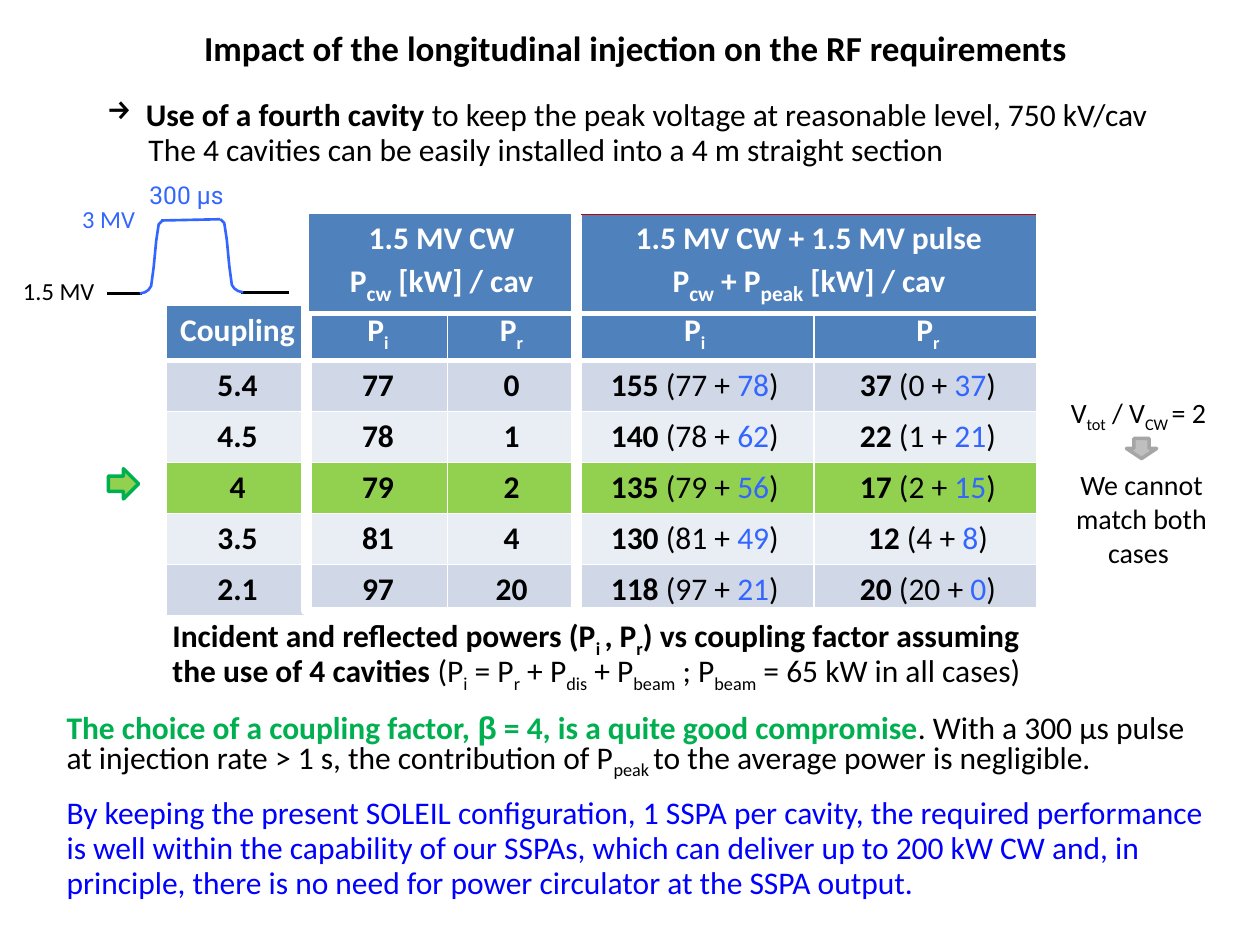
from lxml import etree
from pptx import Presentation
from pptx import util as u
from pptx.dml import color as dml
from pptx.enum import shapes, text
from pptx.oxml import ns

BLACK, WHITE, BLUE = "000000", "FFFFFF", "3366FF"
HEADER, DARK, LIGHT, GREEN = "4F81BD", "D0D8E8", "E9EDF4", "92D050"
CENTER = text.PP_ALIGN.CENTER


def rgb(value):
    return dml.RGBColor.from_string(value)


def bold(words, color=None, font=None):
    return {"words": words, "bold": True, "color": color, "font": font}


def plain(words, color=None):
    return {"words": words, "color": color}


def sub(words, bold=False, size=None):
    return {"words": words, "bold": bold, "size": size, "sub": True}


class SlideBuilder:
    font = "Calibri"

    def __init__(self, presentation):
        self.slide = presentation.slides.add_slide(presentation.slide_layouts[5])
        self.shapes = self.slide.shapes

    def start_group(self):
        self.shapes = self.slide.shapes.add_group_shape().shapes

    def end_group(self):
        self.shapes = self.slide.shapes

    def add_paragraphs(self, frame, paragraphs, size=18, color=BLACK, align=None, spacing=None):
        for index, runs in enumerate(paragraphs):
            paragraph = frame.add_paragraph() if index else frame.paragraphs[0]
            paragraph.alignment = align
            paragraph.line_spacing = spacing
            for item in runs:
                run = paragraph.add_run()
                run.text = item["words"]
                run.font.name = item.get("font") or self.font
                run.font.size = u.Pt(item.get("size") or size)
                run.font.bold = item.get("bold", False)
                run.font.color.rgb = rgb(item.get("color") or color)
                if item.get("sub"):
                    run.font._element.set("baseline", "-25000")

    def fit(self, frame):
        frame.word_wrap = True
        frame.auto_size = text.MSO_AUTO_SIZE.SHAPE_TO_FIT_TEXT
        frame.vertical_anchor = text.MSO_ANCHOR.TOP

    def title(self, box, words):
        shape = self.slide.shapes.title
        shape.left, shape.top, shape.width, shape.height = map(u.Inches, box)
        self.fit(shape.text_frame)
        self.add_paragraphs(shape.text_frame, [[bold(words)]], size=20,
                            align=text.PP_ALIGN.LEFT)

    def text(self, box, paragraphs, **style):
        frame = self.shapes.add_textbox(*map(u.Inches, box)).text_frame
        self.fit(frame)
        self.add_paragraphs(frame, paragraphs, **style)
        return frame

    def indent(self, paragraph, left, first=0, bullet=None):
        properties = paragraph._p.get_or_add_pPr()
        properties.set("marL", str(u.Inches(left)))
        properties.set("indent", str(u.Inches(first)))
        if bullet:
            etree.SubElement(properties, ns.qn("a:buChar")).set("char", bullet)

    def shape(self, kind, box, line, width, fill=None):
        shape = self.shapes.add_shape(kind, *map(u.Inches, box))
        self.outline(shape, line, width, fill)

    def outline(self, shape, line, width, fill=None):
        shape.shadow.inherit = False
        shape.line.color.rgb = rgb(line)
        shape.line.width = u.Pt(width)
        if fill:
            shape.fill.solid()
            shape.fill.fore_color.rgb = rgb(fill)
        else:
            shape.fill.background()

    def line(self, ends, color):
        line = self.shapes.add_connector(shapes.MSO_CONNECTOR.STRAIGHT, *map(u.Inches, ends))
        line.line.color.rgb = rgb(color)
        line.line.width = u.Pt(1.5)
        etree.SubElement(line._element.spPr, ns.qn("a:effectLst"))

    def curve(self, points, color):
        start, *rest = [tuple(map(u.Inches, point)) for point in points]
        builder = self.shapes.build_freeform(*start)
        builder.add_line_segments(rest, close=False)
        self.outline(builder.convert_to_shape(), color, 1.5)

    def cell(self, cell, paragraphs, fill, color, borders):
        properties = cell._tc.get_or_add_tcPr()
        for side in "LRTB":
            line = etree.SubElement(properties, ns.qn(f"a:ln{side}"))
            line.set("w", str(u.Pt(borders.get(side, 1))))
            paint = etree.SubElement(line, ns.qn("a:solidFill"))
            etree.SubElement(paint, ns.qn("a:srgbClr")).set("val", WHITE)
        cell.fill.solid()
        cell.fill.fore_color.rgb = rgb(fill)
        self.add_paragraphs(cell.text_frame, paragraphs, color=color, align=CENTER)

    def table(self, box, widths, rows, fills, borders):
        frame = self.shapes.add_table(len(rows), len(widths), *map(u.Inches, box))
        table = frame.table
        table.first_row = table.horz_banding = False
        for column, width in zip(table.columns, widths):
            column.width = u.Inches(width)
        for r, (row, fill) in enumerate(zip(rows, fills)):
            color = WHITE if fill == HEADER else BLACK
            for c, paragraphs in enumerate(row):
                self.cell(table.cell(r, c), paragraphs, fill, color, borders(r, c))


def power_borders(row, column):
    return {
        "L": 4.5 if column in (1, 3) else 1,
        "R": 4.5 if column in (0, 2) else 1,
        "T": 3 if row == 1 else 1,
        "B": 3 if row == 0 else 1,
    }


def mode_borders(row, column):
    return {"L" if column else "R": 4.5, "B": 3}


def split_power(total, cw, peak):
    return [[bold(str(total)), plain(f" ({cw} + "), plain(str(peak), BLUE), plain(")")]]


def power_row(coupling, incident, reflected, incident_peak, reflected_peak):
    return [
        *([[bold(str(value))]] for value in (coupling, incident, reflected)),
        split_power(incident + incident_peak, incident, incident_peak),
        split_power(reflected + reflected_peak, reflected, reflected_peak),
    ]


def pulse_edge(left, top, direction):
    drops = [(0, 0), (0.03, 0.03), (0.05, 0.16), (0.07, 0.37), (0.09, 0.52),
             (0.11, 0.55), (0.14, 0.57), (0.18, 0.58)]
    return [(left + direction * x, top + y) for x, y in drops]


def main():
    presentation = Presentation()
    presentation.slide_width, presentation.slide_height = u.Inches(10), u.Inches(7.5)
    builder = SlideBuilder(presentation)
    spacing = u.Pt(20)

    powers = [(5.4, 77, 0, 78, 37), (4.5, 78, 1, 62, 21), (4, 79, 2, 56, 15),
              (3.5, 81, 4, 49, 8), (2.1, 97, 20, 21, 0)]
    heading = [[[bold("Coupling")]]] + [[[bold("P"), sub(name, True)]] for name in "irir"]
    builder.table((1.32, 2.42, 6.96, 2.43), (1.13, 1.1, 1.02, 1.89, 1.81),
                  [heading] + [power_row(*values) for values in powers],
                  (HEADER, DARK, LIGHT, GREEN, LIGHT, DARK), power_borders)
    modes = [
        [[bold("1.5 MV CW")],
         [bold("P"), sub("cw", True, 21), bold(" [kW] / cav")]],
        [[bold("1.5 MV CW + 1.5 MV pulse")],
         [bold("P"), sub("cw", True, 21), bold(" + P"), sub("peak", True, 21),
          bold(" [kW] / cav")]],
    ]
    builder.table((2.44, 1.69, 5.83, 0.7), (2.13, 3.7), [modes], [HEADER], mode_borders)

    builder.text((0.43, 6.27, 9.29, 0.94), [[plain(
        "By keeping the present SOLEIL configuration, 1 SSPA per cavity, the required "
        "performance is well within the capability of our SSPAs, which can deliver up to "
        "200 kW CW and, in principle, there is no need for power circulator at the SSPA "
        "output.")]], color="0000FF", spacing=spacing)
    builder.title((1.52, 0.16, 7.17, 0.44),
                  "Impact of the longitudinal injection on the RF requirements")
    builder.text((1.27, 4.9, 7.32, 0.66), [
        [bold("Incident and reflected powers (P"), sub("i ", True), bold(", P"),
         sub("r", True), bold(") vs coupling factor assuming")],
        [bold("the use of 4 cavities "), plain("(P"), sub("i"), plain(" = P"), sub("r"),
         plain(" + P"), sub("dis"), plain(" + P"), sub("beam"), plain(" ; P"), sub("beam"),
         plain(" = 65 kW in all cases)")],
    ], spacing=spacing)
    cavity = builder.text((0.75, 0.73, 9.13, 0.66), [
        [bold("Use of a fourth cavity"),
         plain(" to keep the peak voltage at reasonable level, 750 kV/cav")],
        [plain("The 4 cavities can be easily installed into a 4 m straight section")],
    ], spacing=spacing)
    builder.indent(cavity.paragraphs[0], 0.31, -0.31, "→")
    builder.indent(cavity.paragraphs[1], 0.33)

    builder.start_group()
    builder.line((1.28, 1.75, 1.75, 1.74), BLUE)
    builder.line((1.91, 2.32, 2.29, 2.32), BLACK)
    builder.curve(pulse_edge(1.75, 1.74, 1), BLUE)
    builder.text((0.97, 1.38, 1.02, 0.34),
                 [[{"words": "300 µs", "font": "Roboto"}]], size=14, color=BLUE, align=CENTER)
    builder.line((0.85, 2.33, 1.13, 2.33), BLACK)
    builder.curve(pulse_edge(1.29, 1.75, -1), BLUE)
    builder.end_group()
    builder.text((0.04, 2.14, 0.87, 0.34), [[plain(" 1.5 MV")]], size=14)
    builder.text((0.51, 1.57, 0.75, 0.34), [[plain(" 3 MV")]], size=14, color=BLUE)

    kinds = shapes.MSO_SHAPE
    builder.shape(kinds.RECTANGLE, (2.42, 1.67, 2.17, 3.18), WHITE, 4.5)
    builder.shape(kinds.RECTANGLE, (4.57, 1.68, 3.69, 3.18), "C00000", 4)
    builder.shape(kinds.RIGHT_ARROW, (0.86, 3.72, 0.24, 0.24), "00B050", 2, GREEN)
    builder.text((0.43, 5.59, 9.13, 0.66), [[
        bold("The choice of a coupling factor, ", "00B050"), bold("β", "00B050", "Arial"),
        bold(" = 4, is a quite good compromise", "00B050"),
        plain(". With a 300 µs pulse at injection rate > 1 s, the contribution of P"),
        sub("peak "), plain("to the average power is negligible."),
    ]], spacing=spacing)
    builder.shape(kinds.RECTANGLE, (4.57, 1.66, 3.69, 3.2), WHITE, 5.5)

    builder.start_group()
    match = builder.text((8.39, 3.09, 1.34, 1.45), [
        [plain("V"), sub("tot"), plain(" / V"), sub("CW "), plain("= 2 ")],
        [plain("We cannot match both cases ")],
    ], size=16, align=CENTER)
    match.paragraphs[1].space_before = u.Pt(19.5)
    builder.shape(kinds.DOWN_ARROW, (8.94, 3.48, 0.24, 0.16), "A6A6A6", 2, "BFBFBF")
    builder.end_group()

    presentation.save("out.pptx")


if __name__ == "__main__":
    main()
